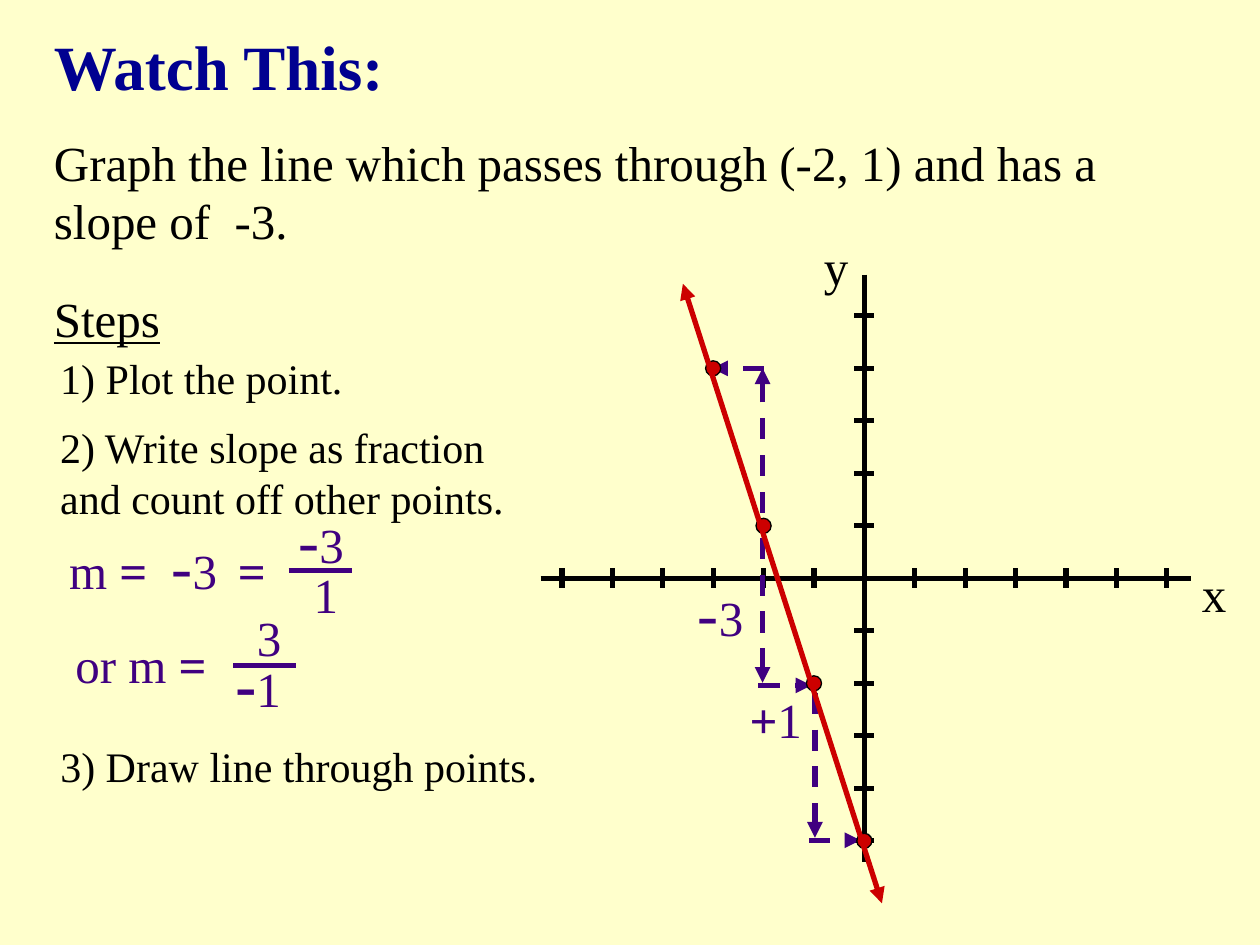
from lxml.etree import SubElement
from pptx import Presentation
from pptx.dml.color import RGBColor
from pptx.enum.dml import MSO_LINE
from pptx.enum.shapes import MSO_CONNECTOR as LINK, MSO_SHAPE as FORM
from pptx.enum.text import MSO_AUTO_SIZE as FIT
from pptx.oxml.ns import qn
from pptx.util import Inches, Pt

BLACK, PURPLE, RED, NAVY = "000000", "400080", "CC0000", "000090"


def color(code):
    return RGBColor.from_string(code)


def add_text(slide, box, lines, size=28, hue=BLACK, bold=False, under=None):
    """Each line is a string or a list of (text, size, bold) runs."""
    frame = slide.shapes.add_textbox(*map(Inches, box)).text_frame
    frame.word_wrap = False
    frame.auto_size = FIT.SHAPE_TO_FIT_TEXT
    for i, line in enumerate(lines):
        par = frame.paragraphs[0] if i == 0 else frame.add_paragraph()
        font = par.font
        font.name, font.size, font.bold = "Times New Roman", Pt(size), bold
        font.color.rgb = color(hue)
        font.underline = under
        if isinstance(line, str):
            line = [(line, size, bold)]
        for words, points, heavy in line:
            run = par.add_run()
            run.text = words
            if points != size:
                run.font.size = Pt(points)
            if heavy != bold:
                run.font.bold = heavy


def add_line(slide, start, end, hue=BLACK, dash=False, tips=()):
    link = slide.shapes.add_connector(
        LINK.STRAIGHT, *map(Inches, (*start, *end)))
    link.line.color.rgb = color(hue)
    link.line.width = Pt(3)
    if dash:
        link.line.dash_style = MSO_LINE.DASH
    props = link.element.spPr
    for tip in tips:
        SubElement(props.find(qn("a:ln")), qn("a:" + tip), type="triangle")
    SubElement(props, qn("a:effectLst"))


def add_dot(slide, x, y, size=0.12):
    box = (x - size / 2, y - size / 2, size, size)
    dot = slide.shapes.add_shape(FORM.OVAL, *map(Inches, box))
    dot.shadow.inherit = False
    dot.fill.solid()
    dot.fill.fore_color.rgb = color(RED)
    dot.line.color.rgb = color(BLACK)
    dot.line.width = Pt(0.75)


def add_head(slide, left, top):
    add_text(slide, (left, top, 2.84, 0.71), ["Watch This:"], 36, NAVY, True)
    add_text(slide, (left, top + 0.83, 8.67, 1.03),
             ["Graph the line which passes through (-2, 1) and has a",
              "slope of  -3."])


def add_steps(slide, left, top):
    add_text(slide, (left, top, 1.04, 0.57), ["Steps"], under=True)
    steps = [
        (0.51, 2.44, 0.5, ["1) Plot the point."]),
        (1.06, 3.73, 0.9, ["2) Write slope as fraction",
                           "and count off other points."]),
        (3.59, 3.99, 0.5, ["3) Draw line through points."]),
    ]
    for down, width, high, lines in steps:
        add_text(slide, (left + 0.05, top + down, width, high), lines, 24)


def add_slopes(slide, left, top):
    """Slope as a fraction, written in two ways."""
    minus = ("-", 36, False)
    three, one = ("3", 28, False), ("1", 28, False)
    parts = [
        (0, 0.21, 1.48, 0.7,
         [("m ", 28, False), ("=  ", 28, True), minus, three]),
        (1.34, 0.32, 0.42, 0.57, [("=", 28, True)]),
        (1.82, 0, 0.56, 0.7, [minus, three]),
        (1.94, 0.51, 0.4, 0.57, [one]),
        (0.05, 1.07, 1.33, 0.57, [("or m", 28, False), (" =", 28, True)]),
        (1.49, 0.85, 0.4, 0.57, [three]),
        (1.32, 1.15, 0.56, 0.7, [("-", 36, True), one]),
    ]
    for x, y, width, high, runs in parts:
        add_text(slide, (left + x, top + y, width, high), [runs], hue=PURPLE)
    for x, y in ((1.84, 0.61), (1.4, 1.36)):
        add_line(slide, (left + x, top + y), (left + x + 0.5, top + y), PURPLE)


def add_graph(slide, left, top, width, high):
    mid_x, mid_y = left + 2.57, top + 2.41
    unit_x, unit_y, tick = 0.4, 2.5 / 6, 0.08

    def spot(x, y):
        return mid_x + x * unit_x, mid_y - y * unit_y

    add_line(slide, (left, mid_y), (left + width, mid_y))
    add_line(slide, (mid_x, top), (mid_x, top + high))
    for n in range(-6, 7):
        x, y = spot(n, n)
        if n:
            add_line(slide, (x, mid_y - tick), (x, mid_y + tick))
        if 0 < abs(n) < 6:
            add_line(slide, (mid_x - tick, y), (mid_x + tick, y))

    add_text(slide, (left + 5.15, top + 2.24, 0.4, 0.57), ["x"])
    add_text(slide, (left + 2.15, top - 0.35, 0.4, 0.57), ["y"])
    add_text(slide, (left + 1.15, top + 2.32, 0.56, 0.7),
             [[("-", 36, False), ("3", 28, False)]], hue=PURPLE)
    add_text(slide, (left + 1.56, top + 3.24, 0.62, 0.57),
             [[("+", 28, True), ("1", 28, False)]], hue=PURPLE)

    moves = [
        ((-2.02, 0.77), (-2.02, -1.99)),
        ((-2.1, -2.04), (-1.05, -2.04)),
        ((-0.98, -2.18), (-0.98, -4.94)),
        ((-1.1, -4.99), (-0.08, -4.99)),
        ((-2.02, 1.25), (-2.02, 4)),
        ((-2, 4), (-3.02, 4)),
    ]
    for start, end in moves:
        add_line(slide, spot(*start), spot(*end), PURPLE, True, ["tailEnd"])
    for x in range(-3, 1):
        add_dot(slide, *spot(x, -3 * x - 5))
    add_line(slide, spot(-3.6, 5.61), spot(0.35, -6.19), RED,
             tips=["headEnd", "tailEnd"])


def main():
    deck = Presentation()
    deck.slide_width, deck.slide_height = Inches(10), Inches(7.5)
    slide = deck.slides.add_slide(deck.slide_layouts[6])
    back = slide.background.fill
    back.solid()
    back.fore_color.rgb = color("FFFFCC")
    add_head(slide, 0.33, 0.17)
    add_steps(slide, 0.33, 2.24)
    add_slopes(slide, 0.45, 3.92)
    add_graph(slide, 4.29, 2.18, 5.16, 4.66)
    deck.save("out.pptx")


if __name__ == "__main__":
    main()
